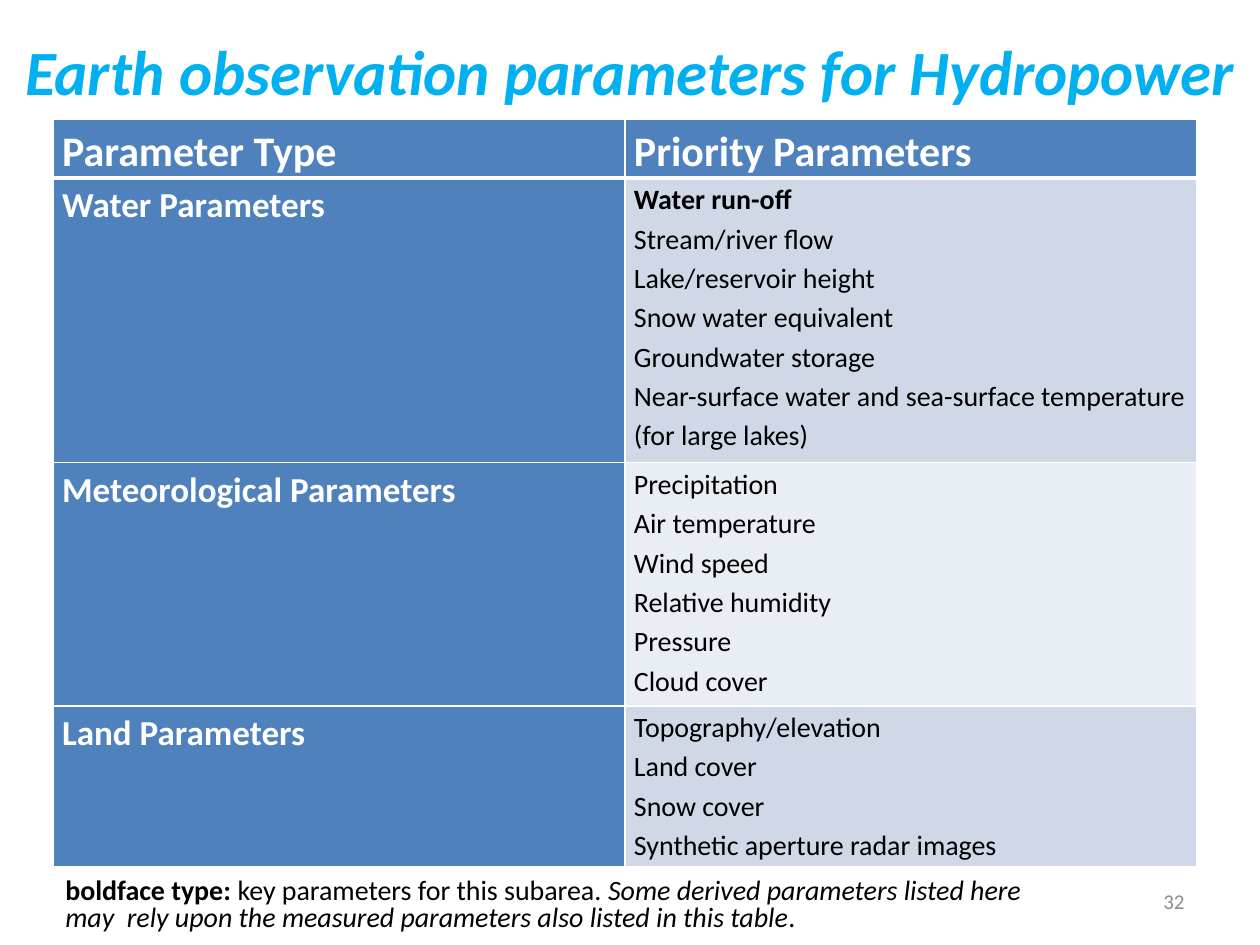
from pptx import Presentation
from pptx.dml.color import RGBColor
from pptx.enum import text
from pptx.oxml import parse_xml
from pptx.oxml.ns import nsdecls
from pptx.util import Cm, Pt

BLUE, WHITE, BLACK = "4F81BD", "FFFFFF", "000000"


def style(run, size, color, bold=False, italic=False):
    font = run.font
    font.name, font.size = "Calibri", Pt(size)
    font.bold, font.italic = bold, italic
    font.color.rgb = RGBColor.from_string(color)


def add_border(cell, side, points):
    cell._tc.get_or_add_tcPr().append(parse_xml(
        f'<a:ln{side} {nsdecls("a")} w="{Pt(points)}"><a:solidFill>'
        f'<a:srgbClr val="{WHITE}"/></a:solidFill></a:ln{side}>'))


prs = Presentation()
prs.slide_width, prs.slide_height = Cm(25.4), Cm(19.05)
slide = prs.slides.add_slide(prs.slide_layouts[5])

# Title
title = slide.shapes.title
title.left, title.top, title.width, title.height = Cm(0), Cm(0.43), Cm(25.4), Cm(1.98)
title.text_frame.text = "Earth observation parameters for Hydropower"
title.text_frame.auto_size = text.MSO_AUTO_SIZE.NONE
title.text_frame.vertical_anchor = text.MSO_ANCHOR.MIDDLE
title.text_frame.paragraphs[0].alignment = text.PP_ALIGN.CENTER
style(title.text_frame.paragraphs[0].runs[0], 36, "00B0F0", True, True)

# Parameter table: type, priority parameters, row height, fill of the right cell
rows = [
    ("Parameter Type", ["Priority Parameters"], 1.17, BLUE),
    ("Water Parameters",
     ["Water run-off", "Stream/river flow", "Lake/reservoir height",
      "Snow water equivalent", "Groundwater storage",
      "Near-surface water and sea-surface temperature (for large lakes)"],
     5.74, "D0D8E8"),
    ("Meteorological Parameters",
     ["Precipitation", "Air temperature", "Wind speed",
      "Relative humidity", "Pressure", "Cloud cover"],
     4.9, "E9EDF4"),
    ("Land Parameters",
     ["Topography/elevation", "Land cover", "Snow cover",
      "Synthetic aperture radar images"],
     3.25, "D0D8E8"),
]
key_parameters = {"Water run-off"}

parameters = slide.shapes.add_table(
    len(rows), 2, Cm(1.07), Cm(2.4), Cm(23.06), Cm(15.06)).table
for r, (kind, priorities, height, fill) in enumerate(rows):
    parameters.rows[r].height = Cm(height)
    for c, (lines, color) in enumerate([([kind], BLUE), (priorities, fill)]):
        cell = parameters.cell(r, c)
        cell.margin_left = cell.margin_right = Cm(0.18)
        cell.margin_top = cell.margin_bottom = 0
        for side, points in (("L", 1), ("R", 1), ("T", 3 if r == 1 else 1),
                             ("B", 3 if r == 0 else 1)):
            add_border(cell, side, points)
        cell.fill.solid()
        cell.fill.fore_color.rgb = RGBColor.from_string(color)
        cell.text_frame.text = "\n".join(lines)
        for paragraph in cell.text_frame.paragraphs:
            paragraph.line_spacing = 1.15
            run = paragraph.runs[0]
            if r == 0:
                style(run, 24, WHITE, True)
            elif c == 0:
                style(run, 20, WHITE, True)
            else:
                style(run, 16, BLACK, run.text in key_parameters)

# Note below the table
note = slide.shapes.add_textbox(Cm(1.07), Cm(17.6), Cm(23.06), Cm(1.37)).text_frame
note.word_wrap = True
legend = note.paragraphs[0]
legend.line_spacing = 0.8
for words, bold, italic in [
    ("boldface type: ", True, False),
    ("key parameters for this subarea. ", False, False),
    ("Some derived parameters listed here ", False, True),
    ("\n", False, False),
    ("may  rely upon the measured parameters also listed in this table", False, True),
    (".", False, False),
]:
    if words == "\n":
        legend.add_line_break()
        continue
    run = legend.add_run()
    run.text = words
    style(run, 16, BLACK, bold, italic)

# Page number
page = slide.shapes.add_textbox(Cm(18.21), Cm(17.65), Cm(5.92), Cm(1.02)).text_frame
page.word_wrap = True
page.vertical_anchor = text.MSO_ANCHOR.MIDDLE
page.text = "32"
page.paragraphs[0].alignment = text.PP_ALIGN.RIGHT
style(page.paragraphs[0].runs[0], 12, "8C8C8C")

prs.save("out.pptx")
